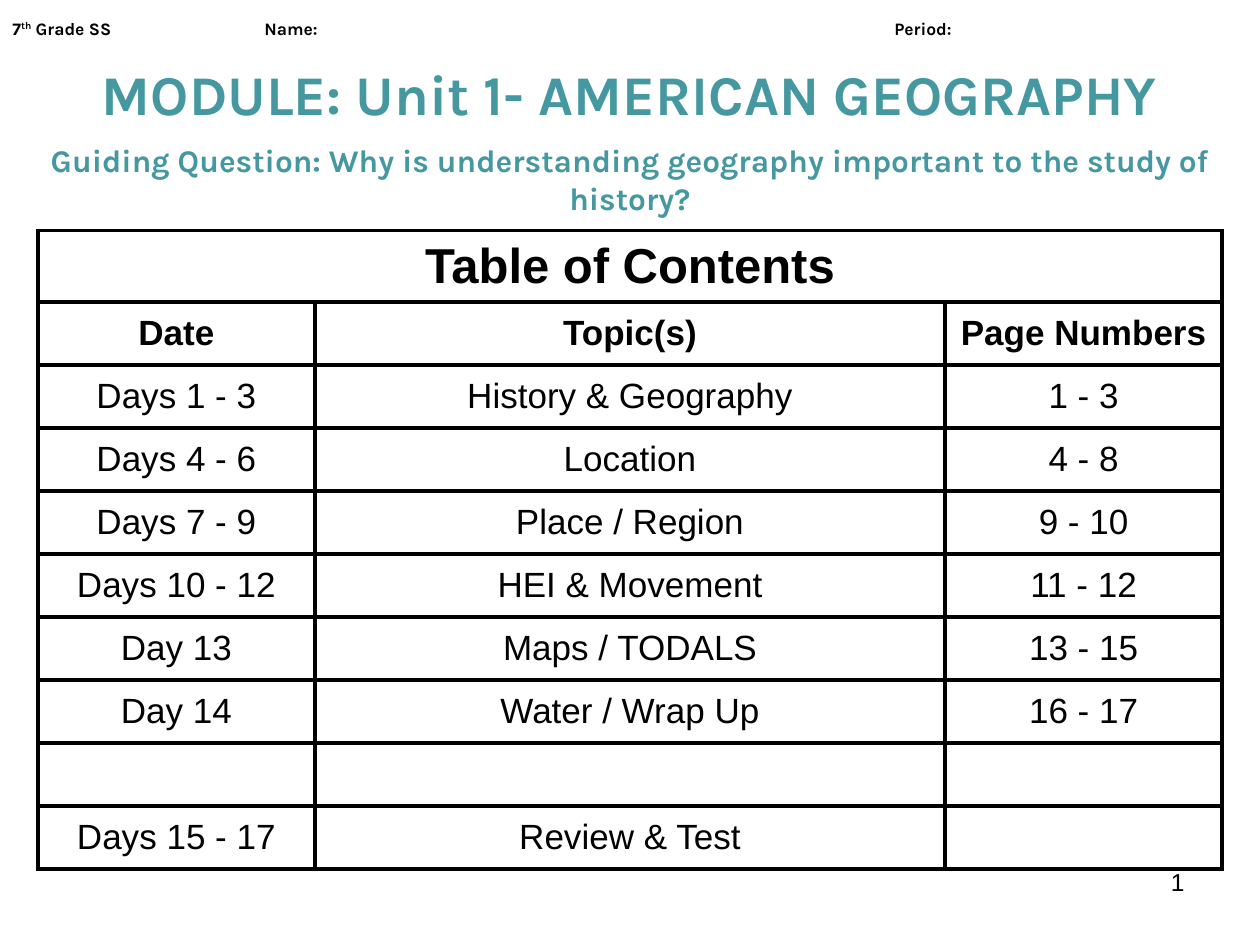
"""Build a unit cover slide with a heading block and a table of contents."""
from lxml import etree
from pptx import Presentation, util as u
from pptx.dml.color import RGBColor
from pptx.enum import text
from pptx.oxml import ns

WIDE, HIGH = 10, 7.5
BLACK = RGBColor(0x00, 0x00, 0x00)
TEAL = RGBColor(0x45, 0x97, 0xA0)
MID = text.PP_ALIGN.CENTER
SMALL = {"name": "Karla", "size": u.Pt(10), "bold": True}
HEAD = {"name": "Karla", "size": u.Pt(32), "bold": True}
GUIDE = {"name": "Karla", "size": u.Pt(18), "bold": True}
TOP = {"name": "Arial", "size": u.Pt(28), "bold": True}
LABEL = {"name": "Arial", "size": u.Pt(20), "bold": True}
BODY = {"name": "Arial", "size": u.Pt(20), "bold": False}
PAGE = {"name": "Arial", "size": u.Pt(14), "bold": False}
COLS = (2.2, 5, 2.2)
ROWS = (
    ("Table of Contents", "", ""),
    ("Date", "Topic(s)", "Page Numbers"),
    ("Days 1 - 3", "History & Geography", "1 - 3"),
    ("Days 4 - 6", "Location", "4 - 8"),
    ("Days 7 - 9", "Place / Region", "9 - 10"),
    ("Days 10 - 12", "HEI & Movement", "11 - 12"),
    ("Day 13", "Maps / TODALS", "13 - 15"),
    ("Day 14", "Water / Wrap Up", "16 - 17"),
    ("", "", ""),
    ("Days 15 - 17", "Review & Test", ""),
)


def add_run(para, words, style, ink=BLACK):
    """Add a run of words in the given style and return it."""
    run = para.add_run()
    run.text = words
    for key, value in style.items():
        setattr(run.font, key, value)
    run.font.color.rgb = ink
    return run


def add_box(slide, left, top, width, height):
    """Add a wrapping text box, placed by shares of the slide, and return its frame."""
    box = slide.shapes.add_textbox(
        u.Inches(left * WIDE), u.Inches(top * HIGH),
        u.Inches(width * WIDE), u.Inches(height * HIGH))
    box.text_frame.word_wrap = True
    return box.text_frame


def set_tabs(para, *stops):
    """Give a paragraph left tab stops at the given inches."""
    tabs = etree.SubElement(para._p.get_or_add_pPr(), ns.qn("a:tabLst"))
    for stop in stops:
        etree.SubElement(tabs, ns.qn("a:tab"), pos=str(u.Inches(stop)), algn="l")


def add_head(slide):
    """Add the name line with the module title below it."""
    frame = add_box(slide, 0, 0.012, 1, 0.13)
    line = frame.paragraphs[0]
    set_tabs(line, 2, 7)
    add_run(line, "7", SMALL)
    add_run(line, "th", SMALL)._r.get_or_add_rPr().set("baseline", "30000")
    add_run(line, " Grade SS\tName:\tPeriod:", SMALL)
    title = frame.add_paragraph()
    title.alignment = MID
    title.space_before = u.Pt(12)
    add_run(title, "MODULE: Unit 1- AMERICAN GEOGRAPHY", HEAD, TEAL)


def add_line(frame, words, style, align, ink=BLACK):
    """Fill the first paragraph of a frame with one aligned run."""
    para = frame.paragraphs[0]
    para.alignment = align
    add_run(para, words, style, ink)


def set_edge(cell):
    """Draw a black line on all four sides of a cell."""
    props = cell._tc.get_or_add_tcPr()
    for spot, side in enumerate(("lnL", "lnR", "lnT", "lnB")):
        edge = etree.Element(ns.qn(f"a:{side}"), w=str(u.Pt(2.25)))
        fill = etree.SubElement(edge, ns.qn("a:solidFill"))
        etree.SubElement(fill, ns.qn("a:srgbClr"), val=str(BLACK))
        props.insert(spot, edge)


def add_grid(slide):
    """Add the table of contents."""
    table = slide.shapes.add_table(
        len(ROWS), len(COLS), u.Inches(0.03 * WIDE), u.Inches(1.83),
        u.Inches(sum(COLS)), u.Inches(0.5 * len(ROWS))).table
    table.first_row = table.horz_banding = False
    for col, width in zip(table.columns, COLS):
        col.width = u.Inches(width)
    styles = (TOP, LABEL) + (BODY,) * (len(ROWS) - 2)
    for row, (words, style) in enumerate(zip(ROWS, styles)):
        table.rows[row].height = u.Inches(0.5)
        for col, word in enumerate(words):
            cell = table.cell(row, col)
            cell.fill.background()
            cell.vertical_anchor = text.MSO_ANCHOR.MIDDLE
            set_edge(cell)
            if word:
                add_line(cell.text_frame, word, style, MID)
    table.cell(0, 0).merge(table.cell(0, len(COLS) - 1))


def main():
    """Build and save the slide."""
    deck = Presentation()
    deck.slide_width, deck.slide_height = u.Inches(WIDE), u.Inches(HIGH)
    slide = deck.slides.add_slide(deck.slide_layouts[6])
    add_head(slide)
    add_line(
        add_box(slide, 0, 0.143, 1, 0.095),
        "Guiding Question: Why is understanding geography important "
        "to the study of history?", GUIDE, MID, TEAL)
    add_grid(slide)
    add_line(add_box(slide, 0.717, 0.911, 0.233, 0.07), "1", PAGE, text.PP_ALIGN.RIGHT)
    deck.save("out.pptx")


if __name__ == "__main__":
    main()
